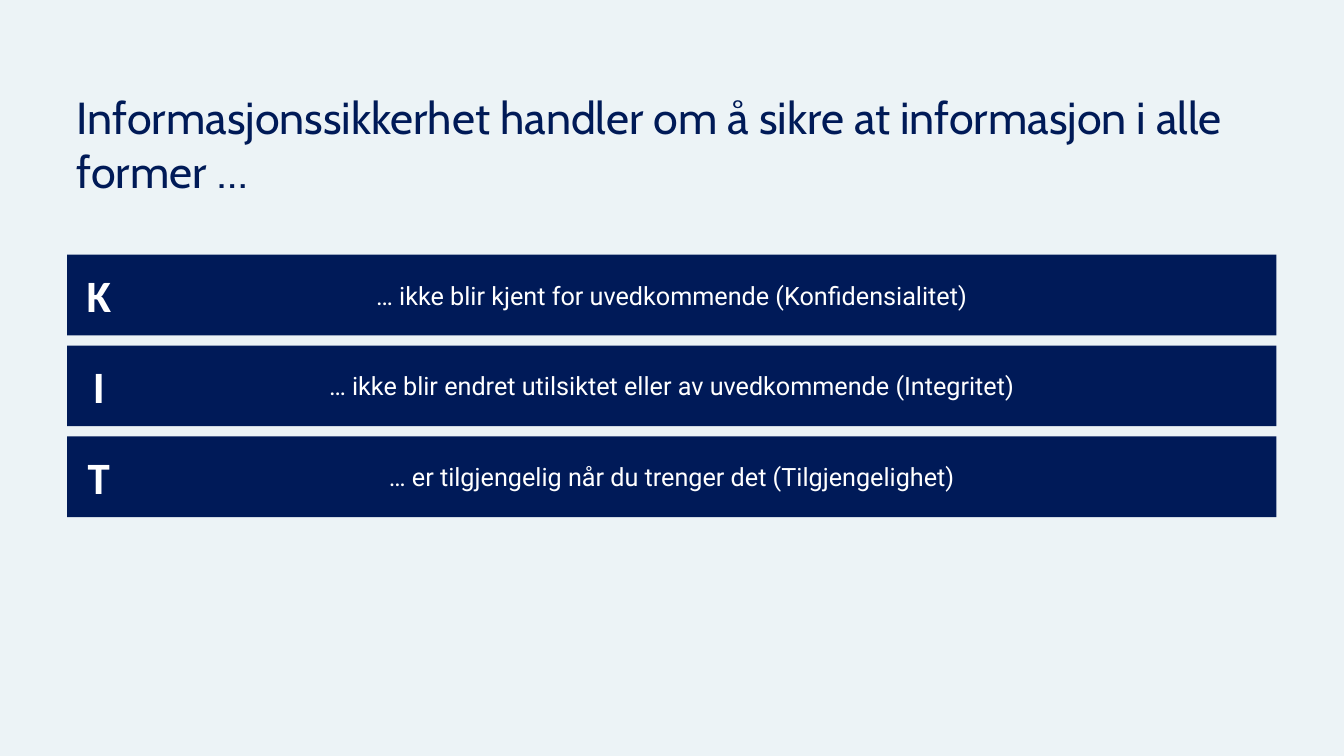
from pptx import Presentation
from pptx.dml.color import RGBColor
from pptx.enum.shapes import MSO_SHAPE
from pptx.enum.text import MSO_ANCHOR, PP_ALIGN
from pptx.util import Cm, Pt

# Content
TITLE = "Informasjonssikkerhet handler om å sikre at informasjon i alle former …"
PRINCIPLES = [
    ("K", "… ikke blir kjent for uvedkommende (Konfidensialitet)"),
    ("I", "… ikke blir endret utilsiktet eller av uvedkommende (Integritet)"),
    ("T", "… er tilgjengelig når du trenger det (Tilgjengelighet)"),
]

# Colours
BACKGROUND = RGBColor(0xEC, 0xF3, 0xF6)
TITLE_NAVY = RGBColor(0x00, 0x1A, 0x57)
BAR_NAVY = RGBColor(0x00, 0x1A, 0x58)
WHITE = RGBColor(0xFF, 0xFF, 0xFF)

# Layout in centimetres
LEFT, WIDTH = 1.69, 30.48
BAR_TOP, BAR_HEIGHT, BAR_STEP = 6.42, 2.03, 2.29
LETTER_LEFT, LETTER_WIDTH, LETTER_HEIGHT = 1.92, 1.14, 1.63


def write_text(shape, text, font_name, size, color, alignment, bold=False):
    frame = shape.text_frame
    frame.text = text
    frame.vertical_anchor = MSO_ANCHOR.MIDDLE
    paragraph = frame.paragraphs[0]
    paragraph.alignment = alignment
    font = paragraph.runs[0].font
    font.name = font_name
    font.size = Pt(size)
    font.bold = bold
    font.color.rgb = color


presentation = Presentation()
presentation.slide_width = Cm(33.87)
presentation.slide_height = Cm(19.05)
slide = presentation.slides.add_slide(presentation.slide_layouts[6])
slide.background.fill.solid()
slide.background.fill.fore_color.rgb = BACKGROUND

# Title
title = slide.shapes.add_textbox(Cm(LEFT), Cm(2.03), Cm(WIDTH), Cm(3.18))
title.text_frame.word_wrap = True
write_text(title, TITLE, "Cabin", 32, TITLE_NAVY, PP_ALIGN.LEFT)

# One bar with its initial per principle
for index, (initial, description) in enumerate(PRINCIPLES):
    top = BAR_TOP + index * BAR_STEP
    bar = slide.shapes.add_shape(
        MSO_SHAPE.RECTANGLE, Cm(LEFT), Cm(top), Cm(WIDTH), Cm(BAR_HEIGHT))
    bar.shadow.inherit = False
    bar.fill.solid()
    bar.fill.fore_color.rgb = BAR_NAVY
    bar.line.fill.background()
    write_text(bar, description, "Roboto", 18, WHITE, PP_ALIGN.CENTER)

    letter_top = top + (BAR_HEIGHT - LETTER_HEIGHT) / 2
    letter = slide.shapes.add_textbox(
        Cm(LETTER_LEFT), Cm(letter_top), Cm(LETTER_WIDTH), Cm(LETTER_HEIGHT))
    letter.text_frame.word_wrap = False
    write_text(letter, initial, "Calibri", 32, WHITE, PP_ALIGN.CENTER, bold=True)

presentation.save("out.pptx")
